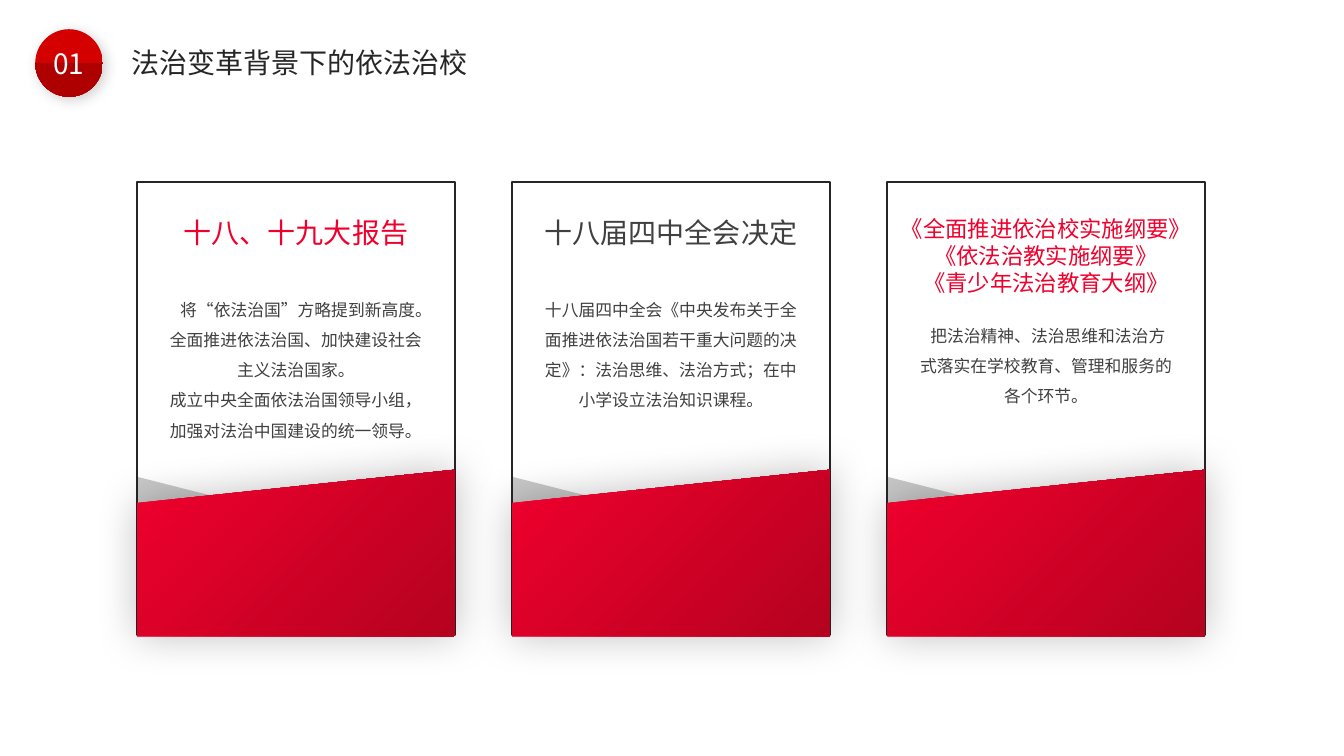
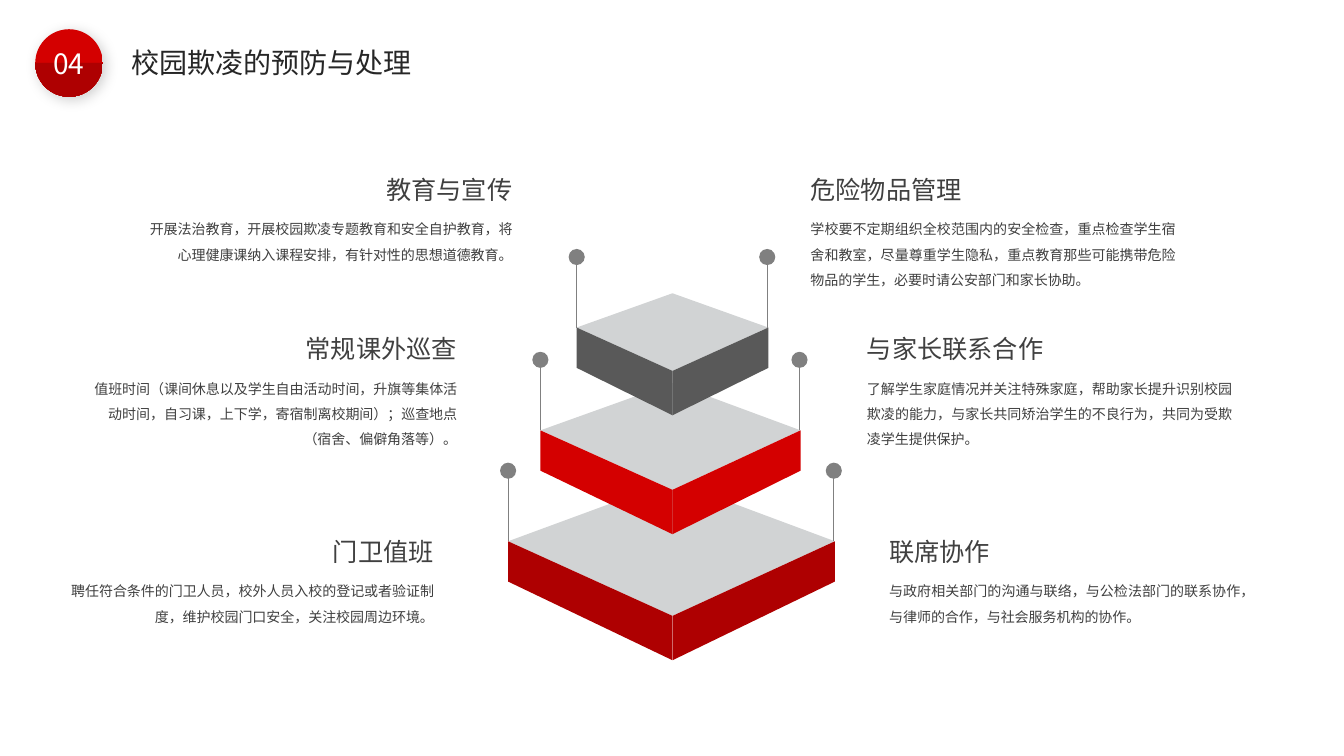
from dataclasses import dataclass

from lxml import etree
from pptx import Presentation
from pptx.dml.color import RGBColor
from pptx.enum import shapes, text
from pptx.oxml.ns import qn
from pptx.util import Inches, Pt

Kind = shapes.MSO_SHAPE
Align = text.PP_ALIGN


@dataclass(frozen=True)
class Theme:
    font: str = "Noto Sans CJK SC"
    dark: str = "262626"
    gray: str = "404040"
    coal: str = "595959"
    pin: str = "808080"
    pale: str = "D1D3D4"
    white: str = "FFFFFF"
    red: str = "D40000"
    deep: str = "AE0001"
    rose: str = "F0002D"
    wine: str = "B5021F"
    title: int = 20
    head: int = 18
    sub: int = 16
    body: int = 12
    note: int = 10


T = Theme()


@dataclass(frozen=True)
class Card:
    head: list[str]
    size: int
    color: str
    span: float
    top: float
    body: list[str]
    high: float


@dataclass(frozen=True)
class Tier:
    left: float
    right: float
    top: float
    edge: float
    front: float
    color: str


@dataclass(frozen=True)
class Note:
    x: float  # outer edge nearest the pyramid
    y: float
    left: bool
    head: str
    body: str
    high: float


CARDS = [
    Card(["十八、十九大报告"], T.title, T.rose, 2.72, 2.82,
         [" 将“依法治国”方略提到新高度。全面推进依法治国、加快建设社会主义法治国家。",
          "成立中央全面依法治国领导小组，加强对法治中国建设的统一领导。"], 1.6),
    Card(["十八届四中全会决定"], T.title, T.gray, 2.99, 2.82,
         ["十八届四中全会《中央发布关于全面推进依法治国若干重大问题的决定》：法治思维、"
          "法治方式；在中小学设立法治知识课程。"], 1.3),
    Card(["《全面推进依治校实施纲要》", "《依法治教实施纲要》", "《青少年法治教育大纲》"],
         T.sub, T.rose, 3.61, 3.08,
         [" 把法治精神、法治思维和法治方式落实在学校教育、管理和服务的各个环节。"], 1.0),
]

TIERS = [
    Tier(5.04, 8.28, 4.77, 5.37, 6.11, T.deep),
    Tier(5.36, 7.94, 3.8, 4.27, 4.86, T.red),
    Tier(5.72, 7.62, 2.91, 3.25, 3.68, T.coal),
]

NOTES = [
    Note(7.94, 1.68, False, "危险物品管理",
         "学校要不定期组织全校范围内的安全检查，重点检查学生宿舍和教室，尽量尊重学生隐私，"
         "重点教育那些可能携带危险物品的学生，必要时请公安部门和家长协助。", 0.85),
    Note(8.5, 3.26, False, "与家长联系合作",
         "了解学生家庭情况并关注特殊家庭，帮助家长提升识别校园欺凌的能力，"
         "与家长共同矫治学生的不良行为，共同为受欺凌学生提供保护。", 0.85),
    Note(8.72, 5.27, False, "联席协作",
         "与政府相关部门的沟通与联络，与公检法部门的联系协作，与律师的合作，"
         "与社会服务机构的协作。", 0.6),
    Note(5.18, 1.68, True, "教育与宣传",
         "开展法治教育，开展校园欺凌专题教育和安全自护教育，将心理健康课纳入课程安排，"
         "有针对性的思想道德教育。", 0.6),
    Note(4.63, 3.26, True, "常规课外巡查",
         "值班时间（课间休息以及学生自由活动时间，升旗等集体活动时间，自习课，上下学，"
         "寄宿制离校期间）；巡查地点（宿舍、偏僻角落等）。", 0.85),
    Note(4.4, 5.27, True, "门卫值班",
         "聘任符合条件的门卫人员，校外人员入校的登记或者验证制度，维护校园门口安全，"
         "关注校园周边环境。", 0.6),
]


def rgb(color: str) -> RGBColor:
    return RGBColor.from_string(color)


def write(frame, lines: list[str], size: int, color: str, align=Align.LEFT,
          space: float = 1.0) -> None:
    """Fill a text frame with one paragraph per line, all in one style."""
    frame.word_wrap = True
    for i, line in enumerate(lines):
        para = frame.add_paragraph() if i else frame.paragraphs[0]
        para.text = line
        para.alignment = align
        para.line_spacing = space
        font = para.font
        font.size = Pt(size)
        font.color.rgb = rgb(color)
        font.name = T.font
        etree.SubElement(font._element, qn("a:ea"), typeface=T.font)


def label(slide, x: float, y: float, w: float, h: float, lines: list[str],
          size: int, color: str, align, space: float = 1.0) -> None:
    box = slide.shapes.add_textbox(Inches(x), Inches(y), Inches(w), Inches(h))
    write(box.text_frame, lines, size, color, align, space)
    box.text_frame.auto_size = text.MSO_AUTO_SIZE.SHAPE_TO_FIT_TEXT


def shape(slide, kind, x: float, y: float, w: float, h: float):
    """Add a preset shape with no outline and no shadow."""
    item = slide.shapes.add_shape(kind, Inches(x), Inches(y), Inches(w), Inches(h))
    item.line.fill.background()
    item.shadow.inherit = False
    return item


def solid(item, color: str) -> None:
    item.fill.solid()
    item.fill.fore_color.rgb = rgb(color)


def blend(item, stops: list[tuple[float, str]], angle: int) -> None:
    """Fill with a two-stop gradient; the angle turns clockwise."""
    item.fill.gradient()
    item.fill.gradient_angle = 360 - angle
    for stop, (pos, color) in zip(item.fill.gradient_stops, stops):
        stop.position = pos
        stop.color.rgb = rgb(color)


def shade(item, alpha: int, blur: int, dist: int, angle: int) -> None:
    """Cast a soft black shadow; alpha in percent, lengths in points."""
    effects = item._element.spPr.find(qn("a:effectLst"))
    outer = etree.SubElement(
        effects, qn("a:outerShdw"), blurRad=str(Pt(blur)), dist=str(Pt(dist)),
        dir=str(angle * 60000), algn="ctr", rotWithShape="0")
    black = etree.SubElement(outer, qn("a:srgbClr"), val="000000")
    etree.SubElement(black, qn("a:alpha"), val=str(alpha * 1000))


def start(deck, num: str, title: str):
    """Add a slide with its numbered badge and title."""
    slide = deck.slides.add_slide(deck.slide_layouts[5])
    badge = shape(slide, Kind.OVAL, 0.35, 0.29, 0.67, 0.67)
    blend(badge, [(0.49, T.red), (0.5, T.deep)], 90)
    shade(badge, 20, 10, 3, 45)
    frame = badge.text_frame
    frame.margin_left = frame.margin_right = 0
    write(frame, [num], T.title, T.white, Align.CENTER)

    head = slide.shapes.title
    head.left, head.top = Inches(1.2), Inches(0.4)
    head.width, head.height = Inches(3.74), Inches(0.43)
    write(head.text_frame, [title], T.title, T.dark)
    head.text_frame.auto_size = text.MSO_AUTO_SIZE.SHAPE_TO_FIT_TEXT
    return slide


def draw_card(slide, x: float, card: Card) -> None:
    wide = 3.15
    fold = shape(slide, Kind.RIGHT_TRIANGLE, x, 4.73, 1.65, 0.42)
    solid(fold, T.dark)
    tint = fold._element.spPr.find(".//" + qn("a:srgbClr"))
    etree.SubElement(tint, qn("a:alpha"), val="25000")

    frame = shape(slide, Kind.RECTANGLE, x, 1.81, wide, 4.49)
    frame.fill.background()
    frame.line.color.rgb = rgb(T.dark)
    frame.line.width = Pt(1.5)

    base = shape(slide, Kind.FLOWCHART_MANUAL_INPUT, x, 4.66, wide, 1.65)
    blend(base, [(0, T.rose), (1, T.wine)], 45)
    shade(base, 25, 30, 0, 0)

    mid = x + wide / 2
    label(slide, mid - card.span / 2, 2.09, card.span, 0.43, card.head,
          card.size, card.color, Align.CENTER)
    label(slide, mid - 1.36, card.top, 2.72, card.high, card.body,
          T.body, T.gray, Align.CENTER, 1.5)


def face(slide, points: list[tuple[float, float]], color: str) -> None:
    first, *rest = [(Inches(x), Inches(y)) for x, y in points]
    path = slide.shapes.build_freeform(*first)
    path.add_line_segments(rest, close=True)
    item = path.convert_to_shape()
    solid(item, color)
    item.line.fill.background()
    item.shadow.inherit = False


def draw_pin(slide, x: float, foot: float) -> None:
    size = 0.16
    line = slide.shapes.add_connector(
        shapes.MSO_CONNECTOR.STRAIGHT,
        Inches(x), Inches(foot - 0.66), Inches(x), Inches(foot))
    line.line.color.rgb = rgb(T.pin)
    line.line.width = Pt(0.5)
    etree.SubElement(line._element.spPr, qn("a:effectLst"))
    dot = shape(slide, Kind.OVAL, x - size / 2, foot - 0.78, size, size)
    solid(dot, T.pin)


def draw_tier(slide, tier: Tier) -> None:
    mid, side, drop = 6.67, 0.4, 0.44
    face(slide, [(tier.left, tier.edge), (mid, tier.top),
                 (tier.right, tier.edge), (mid, tier.front)], T.pale)
    for x in (tier.left, tier.right):
        face(slide, [(x, tier.edge), (mid, tier.front),
                     (mid, tier.front + drop), (x, tier.edge + side)], tier.color)
    for x in (tier.left, tier.right - 0.01):
        draw_pin(slide, x, tier.edge)


def draw_note(slide, note: Note) -> None:
    wide, short = 3.82, 2.0
    label(slide, note.x - wide * note.left, note.y + 0.38, wide, note.high,
          [note.body], T.note, T.gray,
          Align.RIGHT if note.left else Align.JUSTIFY, 1.5)
    label(slide, note.x - short * note.left, note.y, short, 0.4,
          [note.head], T.head, T.gray, Align.RIGHT if note.left else Align.LEFT)


def main() -> None:
    deck = Presentation()
    deck.slide_width, deck.slide_height = Inches(13.33), Inches(7.5)

    reform = start(deck, "01", "法治变革背景下的依法治校")
    for i, card in enumerate(CARDS):
        draw_card(reform, 1.36 + 3.72 * i, card)

    safety = start(deck, "04", "校园欺凌的预防与处理")
    for tier in TIERS:
        draw_tier(safety, tier)
    for note in NOTES:
        draw_note(safety, note)

    deck.save("out.pptx")


if __name__ == "__main__":
    main()
